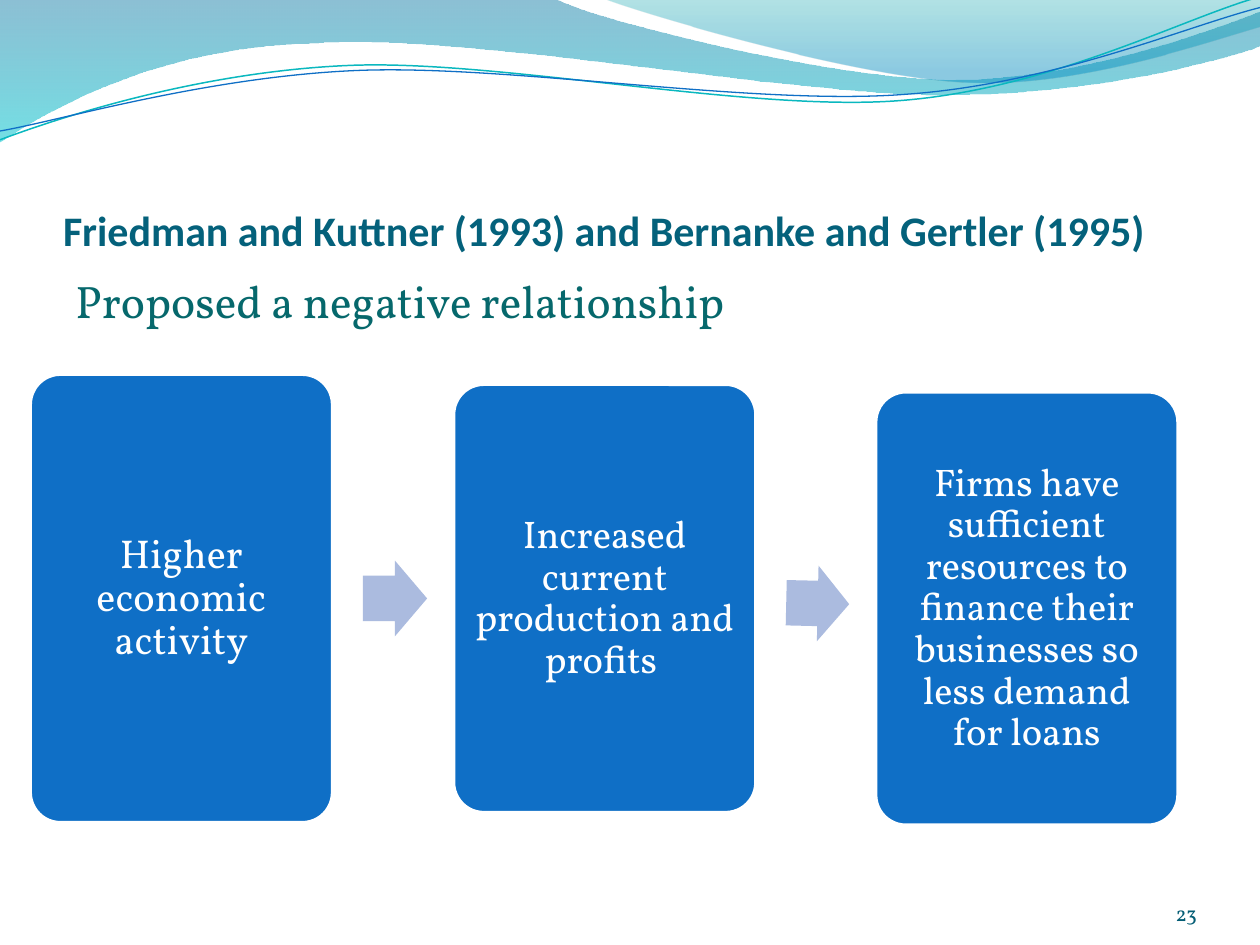
from dataclasses import dataclass

from pptx import Presentation
from pptx.dml.color import RGBColor
from pptx.enum.shapes import MSO_SHAPE
from pptx.enum.text import MSO_ANCHOR, PP_ALIGN
from pptx.oxml.ns import qn
from pptx.util import Inches, Pt

ROUNDED = MSO_SHAPE.ROUNDED_RECTANGLE
ARROW = MSO_SHAPE.RIGHT_ARROW
TOP, MIDDLE, BOTTOM = MSO_ANCHOR.TOP, MSO_ANCHOR.MIDDLE, MSO_ANCHOR.BOTTOM
LEFT, CENTER, RIGHT = PP_ALIGN.LEFT, PP_ALIGN.CENTER, PP_ALIGN.RIGHT
TITLE_ONLY = 5


@dataclass(frozen=True)
class Theme:
    heading_font: str = "Calibri"
    body_font: str = "Vollkorn"
    title: str = "04617B"
    claim: str = "06686C"
    number: str = "045D75"
    card: str = "0F6FC6"
    arrow: str = "ABBBDF"
    white: str = "FFFFFF"
    teal_line: str = "0AB8BF"
    title_size: float = 24
    claim_size: float = 26
    first_card_size: float = 23
    card_size: float = 22
    number_size: float = 12


THEME = Theme()

BANDS = [
    ((0, 0), [
        [(4.4, -0.01)],
        [(4.76, 0.17), (6.64, 0.63), (7.58, 0.63)],
        [(8.53, 0.63), (9.58, 0.26), (10, 0.09)],
        [(10.01, 0.36)],
        [(9.83, 0.44), (8.7, 0.76), (7.46, 0.75)],
        [(6.22, 0.75), (3.82, 0.28), (2.57, 0.34)],
        [(1.29, 0.36), (0.46, 0.83), (-0.01, 1.13)],
    ], [(0, "0074A1", 45), (1, "00C6CF", 55)]),
    ((4.79, -0.01), [
        [(5.09, 0.11), (6.82, 0.62), (7.69, 0.65)],
        [(8.56, 0.69), (9.61, 0.32), (10, 0.21)],
        [(10, 0)],
    ], [(0, "00A1A9", 30), (0.8, "008BBF", 45)]),
]
STRANDS = [
    ((0, 1.11), [
        [(0.48, 0.93), (1.58, 0.57), (2.77, 0.52)],
        [(3.95, 0.47), (5.93, 0.89), (7.13, 0.8)],
        [(8.33, 0.71), (9.38, 0.15), (9.98, -0.02)],
    ], THEME.teal_line, 0.85),
    ((0, 1.04), [
        [(0.47, 0.96), (1.64, 0.61), (2.83, 0.56)],
        [(4.03, 0.51), (5.97, 0.84), (7.17, 0.75)],
        [(8.36, 0.67), (9.41, 0.21), (10, 0.06)],
    ], THEME.card, 0.75),
]
CARDS = [
    ((0.24, 2.97, 2.4, 3.56), "Higher economic activity", THEME.first_card_size),
    ((3.6, 3.05, 2.4, 3.4), "Increased current production and profits ", THEME.card_size),
    ((6.95, 3.11, 2.4, 3.44),
     "Firms have sufficient resources to finance their businesses so less demand for loans",
     THEME.card_size),
]
ARROWS = [((2.88, 4.45, 0.51, 0.6), 0), ((6.24, 4.49, 0.5, 0.6), 1.3)]


def rgb(value):
    return RGBColor.from_string(value)


def inches(box):
    return [Inches(length) for length in box]


def write(frame, text, size, color, font=THEME.body_font, bold=False, align=LEFT,
          anchor=TOP, insets=(0.1, 0.05, 0.1, 0.05), **spacing):
    sides = ("margin_left", "margin_top", "margin_right", "margin_bottom")
    layout = dict(zip(sides, inches(insets)), word_wrap=True, vertical_anchor=anchor)
    frame.text = text
    paragraph = frame.paragraphs[0]
    lettering = paragraph.runs[0].font
    lettering.color.rgb = rgb(color)
    formats = [
        (frame, layout),
        (paragraph, dict(spacing, alignment=align)),
        (lettering, {"size": Pt(size), "name": font, "bold": bold}),
    ]
    for target, values in formats:
        for attribute, value in values.items():
            setattr(target, attribute, value)


def bend(outline, segments):
    steps = iter(list(outline._element.spPr.iter(qn("a:lnTo"))))
    for segment in segments:
        corners = [next(steps) for _ in segment]
        if len(corners) == 1:
            continue
        curve = corners[0].makeelement(qn("a:cubicBezTo"), {})
        corners[0].addprevious(curve)
        for corner in corners:
            curve.append(corner[0])
            corner.getparent().remove(corner)


def add_outline(slide, start, segments, close):
    builder = slide.shapes.build_freeform(*inches(start))
    points = [inches(point) for segment in segments for point in segment]
    builder.add_line_segments(points, close=close)
    outline = builder.convert_to_shape()
    outline.shadow.inherit = False
    bend(outline, segments)
    return outline


def add_waves(slide):
    for start, segments, stops in BANDS:
        band = add_outline(slide, start, segments, True)
        band.line.fill.background()
        band.fill.gradient()
        band.fill.gradient_angle = 270
        for stop, (position, color, _) in zip(band.fill.gradient_stops, stops):
            stop.position = position
            stop.color.rgb = rgb(color)
        tints = band._element.spPr.iter(qn("a:srgbClr"))
        for tint, (_, _, opacity) in zip(list(tints), stops):
            alpha = tint.makeelement(qn("a:alpha"), {"val": str(opacity * 1000)})
            tint.append(alpha)
    for start, segments, color, width in STRANDS:
        strand = add_outline(slide, start, segments, False)
        strand.fill.background()
        strand.line.color.rgb = rgb(color)
        strand.line.width = Pt(width)


def add_title(slide, box, text):
    title = slide.shapes.title
    title.left, title.top, title.width, title.height = inches(box)
    write(title.text_frame, text, THEME.title_size, THEME.title, THEME.heading_font,
          bold=True, anchor=BOTTOM, insets=(0, 0.05, 0, 0))
    slide.shapes._spTree.append(title._element)


def add_text(slide, box, text, size, color, **formats):
    label = slide.shapes.add_textbox(*inches(box))
    write(label.text_frame, text, size, color, **formats)


def add_solid(slide, kind, box, color, adjustments):
    solid = slide.shapes.add_shape(kind, *inches(box))
    solid.shadow.inherit = False
    solid.fill.solid()
    solid.fill.fore_color.rgb = rgb(color)
    for index, value in enumerate(adjustments):
        solid.adjustments[index] = value
    return solid


def add_card(slide, box, text, size):
    card = add_solid(slide, ROUNDED, box, THEME.card, [0.1])
    card.line.color.rgb = rgb(THEME.white)
    card.line.width = Pt(2)
    write(card.text_frame, text, size, THEME.white, align=CENTER, anchor=MIDDLE,
          insets=(0.09,) * 4, line_spacing=0.9)


def add_arrow(slide, box, rotation):
    arrow = add_solid(slide, ARROW, box, THEME.arrow, [0.6, 0.5])
    arrow.line.fill.background()
    arrow.rotation = rotation


def main():
    deck = Presentation()
    deck.slide_width, deck.slide_height = Inches(10), Inches(7.5)
    slide = deck.slides.add_slide(deck.slide_layouts[TITLE_ONLY])
    add_waves(slide)
    add_title(slide, (0.5, 0.77, 9, 1.25),
              "Friedman and Kuttner (1993) and Bernanke and Gertler (1995)")
    add_text(slide, (0.5, 2.12, 9, 4.8), "Proposed a negative relationship",
             THEME.claim_size, THEME.claim, space_before=Pt(5.2))
    for card in CARDS:
        add_card(slide, *card)
    for arrow in ARROWS:
        add_arrow(slide, *arrow)
    add_text(slide, (8.67, 6.95, 0.83, 0.4), "23", THEME.number_size, THEME.number,
             align=RIGHT, anchor=BOTTOM, insets=(0,) * 4)
    deck.save("out.pptx")


if __name__ == "__main__":
    main()
